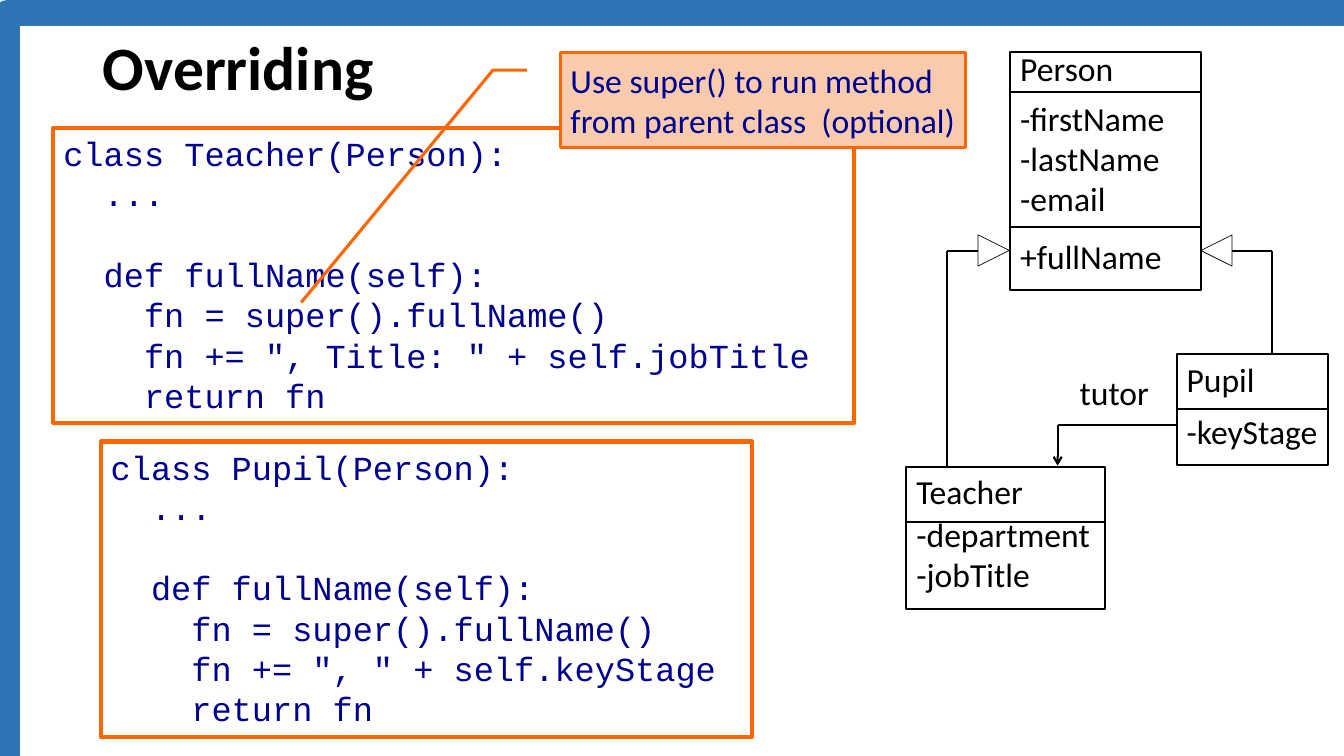
from dataclasses import dataclass
from itertools import pairwise

from lxml.etree import SubElement
from pptx import Presentation
from pptx.dml.color import RGBColor
from pptx.enum.shapes import MSO_CONNECTOR as Link, MSO_SHAPE as Shape
from pptx.enum.text import MSO_ANCHOR as Anchor, PP_ALIGN as Align
from pptx.oxml.ns import qn
from pptx.util import Inches, Pt


@dataclass(frozen=True)
class Theme:
    black: str = "000000"
    white: str = "FFFFFF"
    navy: str = "000090"
    orange: str = "FF6600"
    peach: str = "F8CBAD"
    blue: str = "2E75B6"
    sans: str = "Calibri"
    mono: str = "Courier New"
    title_size: int = 44
    body_size: int = 24


THEME = Theme()

# Content
TITLE = "Overriding"
CALLOUT = "Use super() to run method from parent class  (optional)"
CALLOUT_LEADER = (0.188, -0.083, 0.188, -0.167, 2.639, -0.64)

CODE_PANELS = [
    ((1, 4.38, 6.46, 2.93), """class Pupil(Person):
  ...

  def fullName(self):
    fn = super().fullName()
    fn += ", " + self.keyStage
    return fn"""),
    ((0.53, 1.27, 7.94, 2.93), """class Teacher(Person):
  ...

  def fullName(self):
    fn = super().fullName()
    fn += ", Title: " + self.jobTitle
    return fn"""),
]

# Each class: left, top, width, section heights, then labels as (top, lines)
CLASSES = [
    (10.02, 0.52, 1.89, (0.39, 1.34, 0.63),
     [(0.43, ["Person"]),
      (0.92, ["-firstName", "-lastName", "-email", "+fullName"])]),
    (8.99, 4.63, 1.97, (0.55, 0.86),
     [(4.62, ["Teacher"]), (5.05, ["-department", "-jobTitle"])]),
    (11.67, 3.51, 1.5, (0.55, 0.55),
     [(3.51, ["Pupil"]), (4.03, ["-keyStage"])]),
]
METHOD_GAP = 12

# Inheritance heads as (left, rotation); routes as (points, has arrow)
HEAD_TOP, HEAD_SIZE = 2.33, 0.31
HEADS = [(9.7, 90), (11.91, 270)]
ROUTES = [
    ([(9.39, 4.62), (9.39, 2.49), (9.7, 2.49)], False),
    ([(12.22, 2.49), (12.62, 2.49), (12.62, 3.51)], False),
    ([(11.67, 4.22), (10.49, 4.22), (10.49, 4.62)], True),
]


def write(frame, lines, color=THEME.black, font=THEME.sans,
          size=THEME.body_size, bold=False, wrap=True, anchor=Anchor.TOP):
    frame.word_wrap = wrap
    frame.vertical_anchor = anchor
    for index, line in enumerate(lines):
        para = frame.paragraphs[0] if index == 0 else frame.add_paragraph()
        para.alignment = Align.LEFT
        if index and line.startswith("+"):
            para.space_before = Pt(METHOD_GAP)
        span = para.add_run()
        span.text = line
        span.font.name, span.font.size = font, Pt(size)
        span.font.bold = bold
        span.font.color.rgb = RGBColor.from_string(color)


def add_box(page, kind, place, line=THEME.black, width=1.5, fill=None):
    box = page.shapes.add_shape(kind, *map(Inches, place))
    box.shadow.inherit = False
    box.line.color.rgb = RGBColor.from_string(line)
    box.line.width = Pt(width)
    if fill:
        box.fill.solid()
        box.fill.fore_color.rgb = RGBColor.from_string(fill)
    else:
        box.fill.background()
    return box


def add_label(page, left, top, width, lines):
    height = 0.1 + 0.4 * len(lines)
    box = page.shapes.add_textbox(*map(Inches, (left, top, width, height)))
    write(box.text_frame, lines, wrap=False)


def add_route(page, points, arrow):
    for start, end in pairwise(points):
        link = page.shapes.add_connector(
            Link.STRAIGHT, *map(Inches, (*start, *end)))
        link.line.color.rgb = RGBColor.from_string(THEME.black)
        link.line.width = Pt(1.5)
        if arrow and end == points[-1]:
            SubElement(link.line._get_or_add_ln(), qn("a:tailEnd"), type="arrow")
        SubElement(link._element.spPr, qn("a:effectLst"))


def main():
    deck = Presentation()
    deck.slide_width, deck.slide_height = Inches(13.33), Inches(7.5)
    page = deck.slides.add_slide(deck.slide_layouts[5])

    # Frame and title
    add_box(page, Shape.RECTANGLE, (0.07, 0.13, 13.39, 7.55),
            line=THEME.blue, width=18)
    title = page.shapes.title
    title.left, title.top = Inches(0.92), Inches(-0.03)
    title.width, title.height = Inches(11.5), Inches(1.45)
    write(title.text_frame, [TITLE], size=THEME.title_size, bold=True,
          anchor=Anchor.MIDDLE)
    title.text_frame.paragraphs[0].line_spacing = 0.9

    # Class diagram
    for left, top, width, heights, labels in CLASSES:
        for height in heights:
            add_box(page, Shape.RECTANGLE, (left, top, width, height))
            top += height
        for label_top, lines in labels:
            add_label(page, left, label_top, width, lines)
    for left, rotation in HEADS:
        head = add_box(page, Shape.ISOSCELES_TRIANGLE,
                       (left, HEAD_TOP, HEAD_SIZE, HEAD_SIZE), width=0.5)
        head.rotation = rotation
    for points, arrow in ROUTES:
        add_route(page, points, arrow)
    add_label(page, 10.61, 3.64, 0.9, ["tutor"])

    # Code panels
    for place, code in CODE_PANELS:
        panel = add_box(page, Shape.RECTANGLE, place, line=THEME.orange,
                        width=3, fill=THEME.white)
        write(panel.text_frame, code.split("\n"), color=THEME.navy,
              font=THEME.mono)

    # Callout
    callout = add_box(page, Shape.LINE_CALLOUT_2, (5.56, 0.52, 4.02, 0.94),
                      line=THEME.orange, width=2.25, fill=THEME.peach)
    for index, value in enumerate(CALLOUT_LEADER):
        callout.adjustments[index] = value
    write(callout.text_frame, [CALLOUT], color=THEME.navy, anchor=Anchor.MIDDLE)

    deck.save("out.pptx")


if __name__ == "__main__":
    main()
